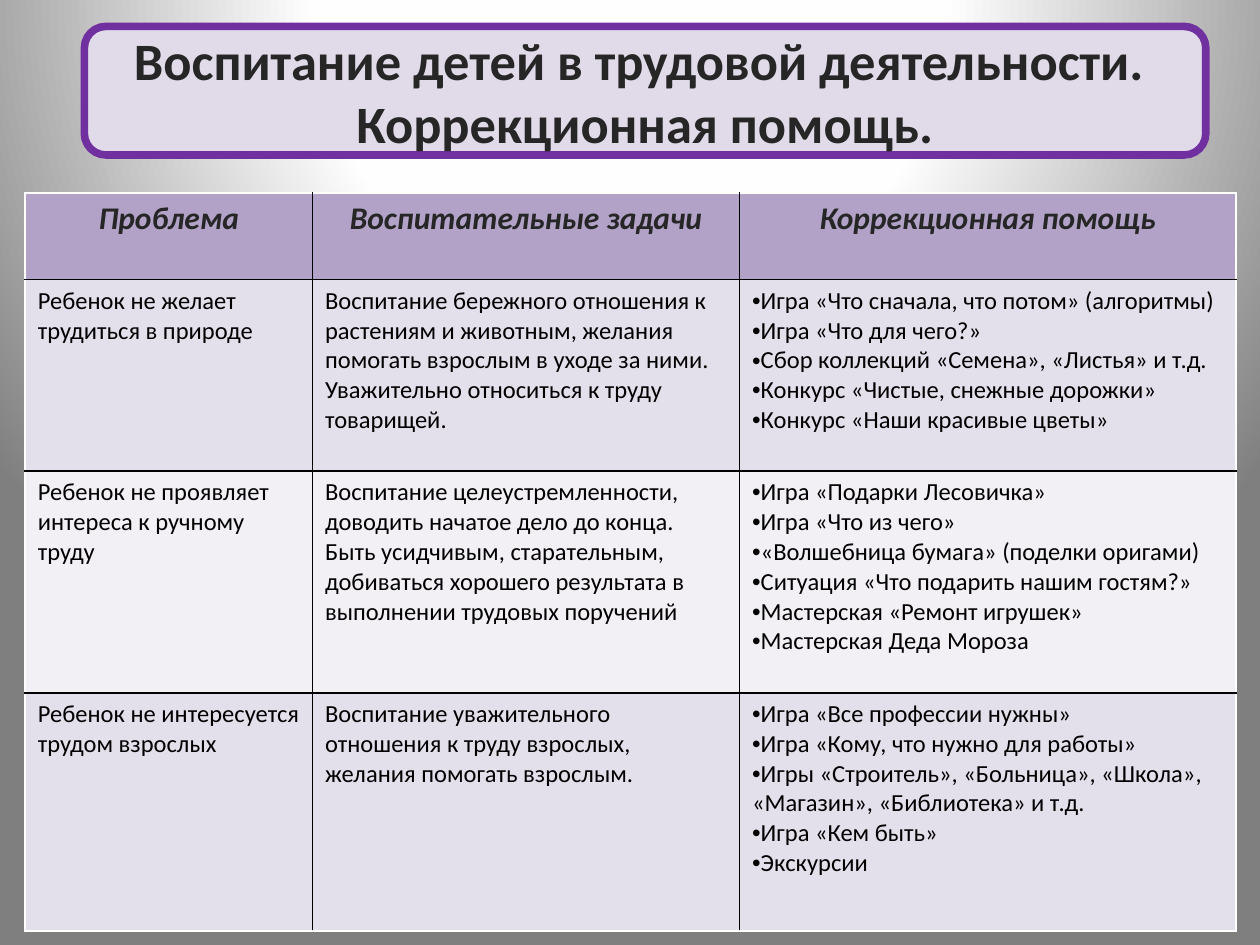
from pptx import Presentation
from pptx import util as u
from pptx.dml.color import RGBColor
from pptx.enum import shapes, text
from pptx.oxml import parse_xml
from pptx.oxml.ns import nsdecls

TITLE = ["Воспитание детей в трудовой деятельности. ", "Коррекционная помощь."]
HEADERS = ["Проблема", "Воспитательные задачи", "Коррекционная помощь"]
# Each row: problem, educational tasks, list of corrective activities
ROWS = [
    ("Ребенок не желает трудиться в природе",
     "Воспитание бережного отношения к растениям и животным, желания помогать "
     "взрослым в уходе за ними. Уважительно относиться к труду товарищей.",
     ["Игра «Что сначала, что потом» (алгоритмы)",
      "Игра «Что для чего?»",
      "Сбор коллекций «Семена», «Листья» и т.д.",
      "Конкурс «Чистые, снежные дорожки»",
      "Конкурс «Наши красивые цветы»"]),
    ("Ребенок не проявляет интереса к ручному труду",
     "Воспитание целеустремленности, доводить начатое дело до конца. Быть "
     "усидчивым, старательным, добиваться хорошего результата в выполнении "
     "трудовых поручений",
     ["Игра «Подарки Лесовичка»",
      "Игра «Что из чего»",
      "«Волшебница бумага» (поделки оригами)",
      "Ситуация «Что подарить нашим гостям?»",
      "Мастерская «Ремонт игрушек»",
      "Мастерская Деда Мороза"]),
    ("Ребенок не интересуется трудом взрослых",
     "Воспитание уважительного отношения к труду взрослых, желания помогать "
     "взрослым.",
     ["Игра «Все профессии нужны»",
      "Игра «Кому, что нужно для работы»",
      "Игры «Строитель», «Больница», «Школа», «Магазин», «Библиотека» и т.д.",
      "Игра «Кем быть»",
      "Экскурсии"]),
]
COL_WIDTHS = [2.28, 3.39, 3.94]
ROW_HEIGHTS = [0.69, 1.52, 1.76, 1.89]
COLORS = {"title_fill": "E0DAE9", "title_line": "7030A0", "heading": "262626",
          "body": "000000", "header_fill": "B2A2C7", "odd": "E4E0EB",
          "even": "F2F0F5", "outer": "FFFFFF", "inner": "000000"}
BACKGROUND = [(0, "FFFFFF"), (40, "FEFEFE"), (100, "7F7F7F")]
FONT, BULLET_FONT = "Calibri", "Arial"


def rgb(name):
    return RGBColor.from_string(COLORS[name])


def add_run(p, words, size, color, bold=False, italic=False):
    r = p.add_run()
    r.text = words
    f = r.font
    f.name, f.size, f.bold, f.italic = FONT, u.Pt(size), bold, italic
    f.color.rgb = rgb(color)


def add_bullet(p):
    p_pr = p._p.get_or_add_pPr()
    for tag in (f'buFont {nsdecls("a")} typeface="{BULLET_FONT}"',
                f'buChar {nsdecls("a")} char="•"'):
        p_pr.append(parse_xml(f"<a:{tag}/>"))


def paragraphs(tf, count):
    return [tf.paragraphs[0]] + [tf.add_paragraph() for _ in range(count - 1)]


def set_borders(cell, row, col, last_row, last_col):
    """White on the table's outer edge, black between cells."""
    edges = {"L": col == 0, "R": col == last_col, "T": row == 0, "B": row == last_row}
    tc_pr = cell._tc.get_or_add_tcPr()
    for i, (side, outer) in enumerate(edges.items()):
        color = COLORS["outer" if outer else "inner"]
        tc_pr.insert(i, parse_xml(
            f'<a:ln{side} {nsdecls("a")} w="12700"><a:solidFill>'
            f'<a:srgbClr val="{color}"/></a:solidFill></a:ln{side}>'))


prs = Presentation()
prs.slide_width, prs.slide_height = u.Inches(10), u.Inches(7.5)
s = prs.slides.add_slide(prs.slide_layouts[6])

# Background: radial gradient centred above the slide
stops = "".join(f'<a:gs pos="{pos * 1000}"><a:srgbClr val="{color}"/></a:gs>'
                for pos, color in BACKGROUND)
s.element.cSld.insert(0, parse_xml(
    f'<p:bg {nsdecls("p", "a")}><p:bgPr><a:gradFill rotWithShape="1">'
    f'<a:gsLst>{stops}</a:gsLst><a:path path="circle">'
    '<a:fillToRect l="50000" t="-80000" r="50000" b="180000"/></a:path>'
    '</a:gradFill><a:effectLst/></p:bgPr></p:bg>'))

# Title plate
sp = s.shapes.add_shape(shapes.MSO_SHAPE.ROUNDED_RECTANGLE, u.Inches(0.67),
                        u.Inches(0.21), u.Inches(8.9), u.Inches(1.02))
sp.shadow.inherit = False
sp.fill.solid()
sp.fill.fore_color.rgb = rgb("title_fill")
sp.line.color.rgb = rgb("title_line")
sp.line.width = u.Pt(4.33)
tf = sp.text_frame
tf.word_wrap = True
tf.vertical_anchor = text.MSO_ANCHOR.MIDDLE
for p, line in zip(paragraphs(tf, len(TITLE)), TITLE):
    p.alignment = text.PP_ALIGN.CENTER
    add_run(p, line, 30, "heading", bold=True)

# Table
grid = [HEADERS] + ROWS
table = s.shapes.add_table(
    len(grid), len(HEADERS), u.Inches(0.2), u.Inches(1.53),
    u.Inches(sum(COL_WIDTHS)), u.Inches(sum(ROW_HEIGHTS))).table
for column, width in zip(table.columns, COL_WIDTHS):
    column.width = u.Inches(width)
for row, height in zip(table.rows, ROW_HEIGHTS):
    row.height = u.Inches(height)

for i, contents in enumerate(grid):
    fill = "header_fill" if i == 0 else "odd" if i % 2 else "even"
    for j, content in enumerate(contents):
        cell = table.cell(i, j)
        cell.fill.solid()
        cell.fill.fore_color.rgb = rgb(fill)
        set_borders(cell, i, j, len(grid) - 1, len(HEADERS) - 1)
        bulleted = isinstance(content, list)
        lines = content if bulleted else [content]
        for p, line in zip(paragraphs(cell.text_frame, len(lines)), lines):
            if i == 0:
                p.alignment = text.PP_ALIGN.CENTER
                add_run(p, line, 18, "heading", bold=True, italic=True)
            else:
                add_run(p, line, 14, "body")
            if bulleted:
                add_bullet(p)

prs.save("out.pptx")
